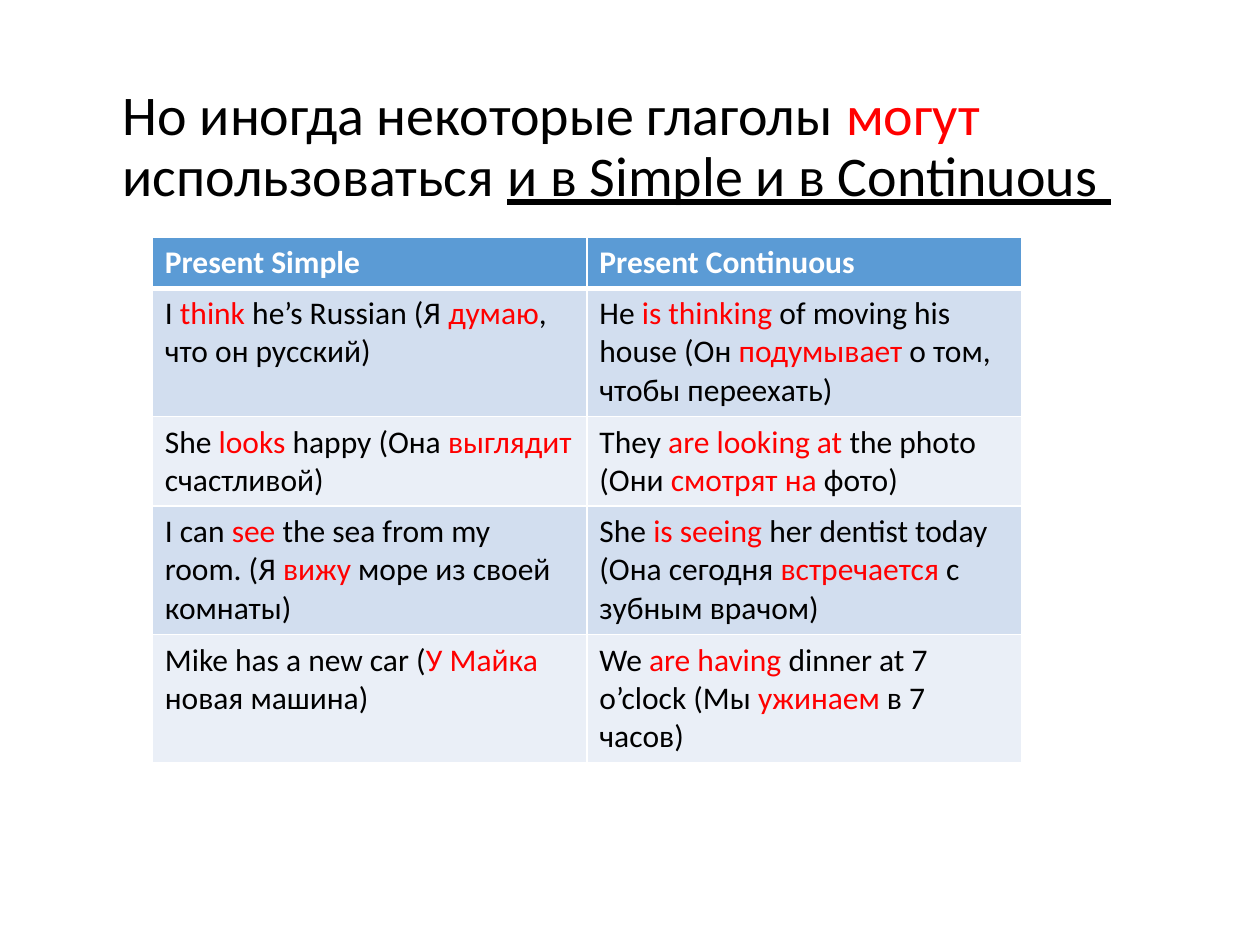
"""Build a slide comparing verbs used in both Present Simple and Present Continuous."""
from lxml.etree import SubElement
from pptx import Presentation
from pptx.dml.color import RGBColor
from pptx.enum.text import MSO_ANCHOR, MSO_AUTO_SIZE, PP_ALIGN
from pptx.oxml.ns import qn
from pptx.util import Cm, Pt

THEME = {
    "font": "Calibri",
    "title_size": 32,
    "table_size": 18,
    "text": "000000",
    "accent": "FF0000",
    "header_text": "FFFFFF",
    "header_fill": "5B9BD5",
    "band_fills": ("D2DEEF", "EAEFF7"),
    "border": "FFFFFF",
    "border_width": 1,
    "header_rule_width": 3,
}

TITLE = [
    ("Но иногда некоторые глаголы ", "text", False),
    ("могут ", "accent", False),
    ("использоваться ", "text", False),
    ("и в Simple и в Continuous ", "text", True),
]
HEADERS = ("Present Simple", "Present Continuous")
EXAMPLES = [
    ("I *think* he’s Russian (Я *думаю*, что он русский)",
     "He *is thinking *of moving his house (Он *подумывает* о том, чтобы переехать)"),
    ("She *looks* happy (Она *выглядит* счастливой)",
     "They *are looking at *the photo (Они *смотрят на *фото)"),
    ("I can *see* the sea from my room. (Я *вижу* море из своей комнаты)",
     "She *is seeing* her dentist today (Она сегодня *встречается *с зубным врачом)"),
    ("Mike has a new car (*У Майка *новая машина)",
     "We *are having *dinner at 7 o’clock (Мы *ужинаем* в 7 часов)"),
]
TITLE_BOX = (2.22, 1.14, 21.9, 3.68)
TABLE_CORNER = (3.07, 4.78)
COLUMN_WIDTH = 8.76
ROW_HEIGHTS = (1.02, 2.59, 1.8, 2.59, 2.59)


def add_span(para, text, size, color, bold=False, underline=False):
    span = para.add_run()
    span.text = text
    span.font.name = THEME["font"]
    span.font.size = Pt(size)
    span.font.bold = bold
    span.font.underline = underline
    span.font.color.rgb = RGBColor.from_string(THEME[color])


def add_marked_text(para, text):
    """Write the pieces between asterisks in the accent colour."""
    for index, piece in enumerate(text.split("*")):
        add_span(para, piece, THEME["table_size"], "accent" if index % 2 else "text")


def style_cell(cell, fill, bottom_width):
    """Give a cell its borders and then its fill."""
    properties = cell._tc.get_or_add_tcPr()
    thin = THEME["border_width"]
    for side, width in (("L", thin), ("R", thin), ("T", thin), ("B", bottom_width)):
        line = SubElement(properties, qn(f"a:ln{side}"), w=str(Pt(width)))
        SubElement(SubElement(line, qn("a:solidFill")), qn("a:srgbClr"), val=THEME["border"])
    cell.fill.solid()
    cell.fill.fore_color.rgb = RGBColor.from_string(fill)


def add_title(page):
    box = page.shapes.title
    box.left, box.top, box.width, box.height = map(Cm, TITLE_BOX)
    frame = box.text_frame
    frame.word_wrap = True
    frame.auto_size = MSO_AUTO_SIZE.NONE
    frame.vertical_anchor = MSO_ANCHOR.MIDDLE
    para = frame.paragraphs[0]
    para.alignment = PP_ALIGN.LEFT
    para.line_spacing = 0.9
    for text, color, underline in TITLE:
        add_span(para, text, THEME["title_size"], color, underline=underline)


def add_examples(page):
    size = (COLUMN_WIDTH * len(HEADERS), sum(ROW_HEIGHTS))
    table = page.shapes.add_table(
        len(ROW_HEIGHTS), len(HEADERS), *map(Cm, TABLE_CORNER + size)).table
    for column in table.columns:
        column.width = Cm(COLUMN_WIDTH)
    for row, height in zip(table.rows, ROW_HEIGHTS):
        row.height = Cm(height)
    for cell, text in zip(table.rows[0].cells, HEADERS):
        style_cell(cell, THEME["header_fill"], THEME["header_rule_width"])
        add_span(cell.text_frame.paragraphs[0], text, THEME["table_size"],
                 "header_text", bold=True)
    for number, texts in enumerate(EXAMPLES):
        for cell, text in zip(table.rows[number + 1].cells, texts):
            style_cell(cell, THEME["band_fills"][number % 2], THEME["border_width"])
            add_marked_text(cell.text_frame.paragraphs[0], text)


def main():
    deck = Presentation()
    deck.slide_width, deck.slide_height = Cm(25.4), Cm(19.05)
    page = deck.slides.add_slide(deck.slide_layouts.get_by_name("Title Only"))
    add_title(page)
    add_examples(page)
    deck.save("out.pptx")


if __name__ == "__main__":
    main()
